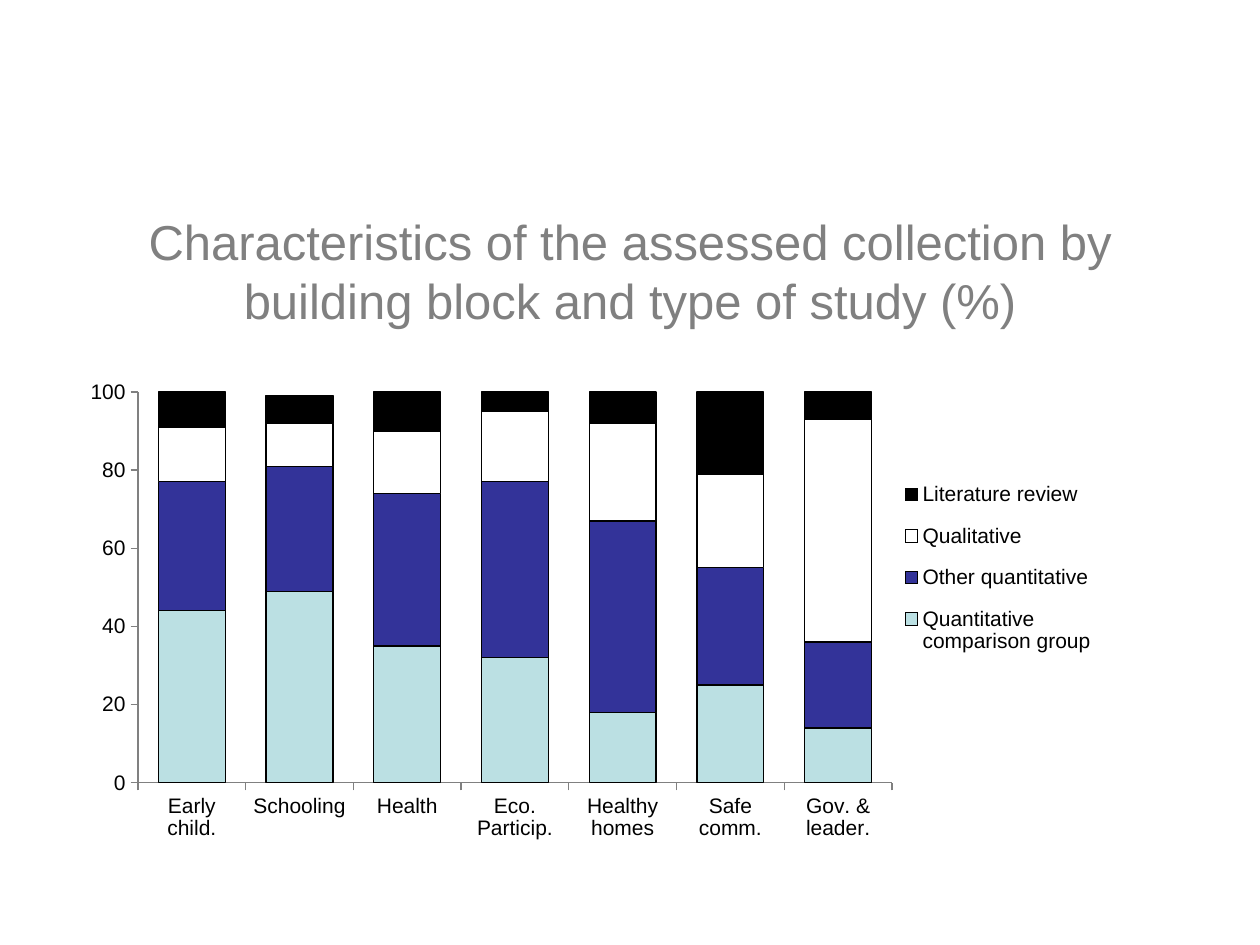
"""Build a slide with a stacked column chart of study types per building block."""
from typing import NamedTuple

from lxml.etree import SubElement
from pptx import Presentation
from pptx.chart.data import CategoryChartData
from pptx.dml.color import RGBColor
from pptx.enum.chart import XL_CHART_TYPE, XL_LEGEND_POSITION, XL_TICK_MARK
from pptx.enum.text import MSO_ANCHOR, PP_ALIGN
from pptx.oxml.ns import qn
from pptx.util import Emu, Pt

EMU_PER_PX = 914400 / 126
FONT = "Arial"
COLORS = {
    "title": "808080",
    "text": "000000",
    "outline": "000000",
    "axis": "808080",
    "comparison": "BBE0E3",
    "quantitative": "333399",
    "qualitative": "FFFFFF",
    "review": "000000",
}


class Frame(NamedTuple):
    """Place and size in px."""
    left: int
    top: int
    width: int
    height: int


class StudyType(NamedTuple):
    """One layer of the stacked columns."""
    name: str
    color: str
    values: tuple[int, ...]


TITLE_FRAME = Frame(63, 191, 1134, 158)
CHART_FRAME = Frame(84, 354, 1022, 507)
PLOT_FRAME = Frame(138, 392, 754, 391)
LEGEND_FRAME = Frame(896, 464, 204, 208)
BLOCKS = ("Early child.", "Schooling", "Health", "Eco. Particip.",
          "Healthy homes", "Safe comm.", "Gov. & leader.")
STUDY_TYPES = (
    StudyType("Quantitative comparison group", "comparison", (44, 49, 35, 32, 18, 25, 14)),
    StudyType("Other quantitative", "quantitative", (33, 32, 39, 45, 49, 30, 22)),
    StudyType("Qualitative", "qualitative", (14, 11, 16, 18, 25, 24, 57)),
    StudyType("Literature review", "review", (9, 7, 10, 5, 8, 21, 8)),
)


def px(length: int) -> Emu:
    """Turn px into EMU."""
    return Emu(round(length * EMU_PER_PX))


def rgb(name: str) -> RGBColor:
    """Look up a named color."""
    return RGBColor.from_string(COLORS[name])


def style_font(font, size: int, color: str) -> None:
    """Set typeface, size and color of a font."""
    font.name, font.size, font.bold = FONT, Pt(size), False
    font.color.rgb = rgb(color)


def add_text(page, text: str, *, frame: Frame, size: int, color: str,
             align=PP_ALIGN.CENTER, anchor=MSO_ANCHOR.MIDDLE) -> None:
    """Add a wrapped text box with one formatted paragraph."""
    box = page.shapes.add_textbox(*map(px, frame)).text_frame
    box.word_wrap, box.vertical_anchor = True, anchor
    para = box.paragraphs[0]
    para.alignment = align
    span = para.add_run()
    span.text = text
    style_font(span.font, size, color)


def place_part(part, frame: Frame, chart_frame: Frame, *, index: int, inner: bool = False) -> None:
    """Fix a chart part at a frame, given on the page, inside the chart's frame."""
    layout = part.find(qn("c:layout"))
    if layout is None:
        layout = SubElement(part, qn("c:layout"))
        part.insert(index, layout)
    manual = SubElement(layout, qn("c:manualLayout"))
    settings = {"layoutTarget": "inner"} if inner else {}
    settings |= {
        "xMode": "edge",
        "yMode": "edge",
        "x": (frame.left - chart_frame.left) / chart_frame.width,
        "y": (frame.top - chart_frame.top) / chart_frame.height,
        "w": frame.width / chart_frame.width,
        "h": frame.height / chart_frame.height,
    }
    for tag, value in settings.items():
        SubElement(manual, qn(f"c:{tag}")).set("val", str(value))


def style_axis(axis) -> None:
    """Give an axis outward ticks, a thin line and no gridlines."""
    axis.has_major_gridlines = False
    axis.major_tick_mark = XL_TICK_MARK.OUTSIDE
    axis.minor_tick_mark = XL_TICK_MARK.NONE
    axis.format.line.color.rgb = rgb("axis")
    axis.format.line.width = Pt(0.75)


def add_study_chart(page, frame: Frame) -> None:
    """Add the stacked column chart with its legend to the right of the plot."""
    data = CategoryChartData(number_format="0")
    data.categories = BLOCKS
    for study in STUDY_TYPES:
        data.add_series(study.name, study.values)
    chart = page.shapes.add_chart(XL_CHART_TYPE.COLUMN_STACKED, *map(px, frame), data).chart
    style_font(chart.font, 12, "text")
    chart.has_title = False
    chart.has_legend = True
    chart.legend.position = XL_LEGEND_POSITION.RIGHT
    chart.legend.include_in_layout = False
    style_font(chart.legend.font, 12, "text")
    plot_area = chart.element.find(".//" + qn("c:plotArea"))
    legend = chart.element.find(".//" + qn("c:legend"))
    place_part(plot_area, PLOT_FRAME, frame, index=0, inner=True)
    place_part(legend, LEGEND_FRAME, frame, index=1)

    style_axis(chart.category_axis)
    scale = chart.value_axis
    style_axis(scale)
    scale.minimum_scale, scale.maximum_scale, scale.major_unit = 0, 100, 20
    scale.tick_labels.number_format = "0"
    scale.tick_labels.number_format_is_linked = False

    plot = chart.plots[0]
    plot.gap_width, plot.overlap, plot.vary_by_categories = 61, 100, False
    for series, study in zip(plot.series, STUDY_TYPES):
        series.format.fill.solid()
        series.format.fill.fore_color.rgb = rgb(study.color)
        series.format.line.color.rgb = rgb("outline")
        series.format.line.width = Pt(0.75)


def main() -> None:
    """Create and save the deck."""
    deck = Presentation()
    deck.slide_width, deck.slide_height = px(1260), px(945)
    page = deck.slides.add_slide(deck.slide_layouts[6])
    add_text(page, "Characteristics of the assessed collection by building block "
                   "and type of study (%)",
             frame=TITLE_FRAME, size=28, color="title")
    add_study_chart(page, CHART_FRAME)
    deck.save("out.pptx")


if __name__ == "__main__":
    main()
